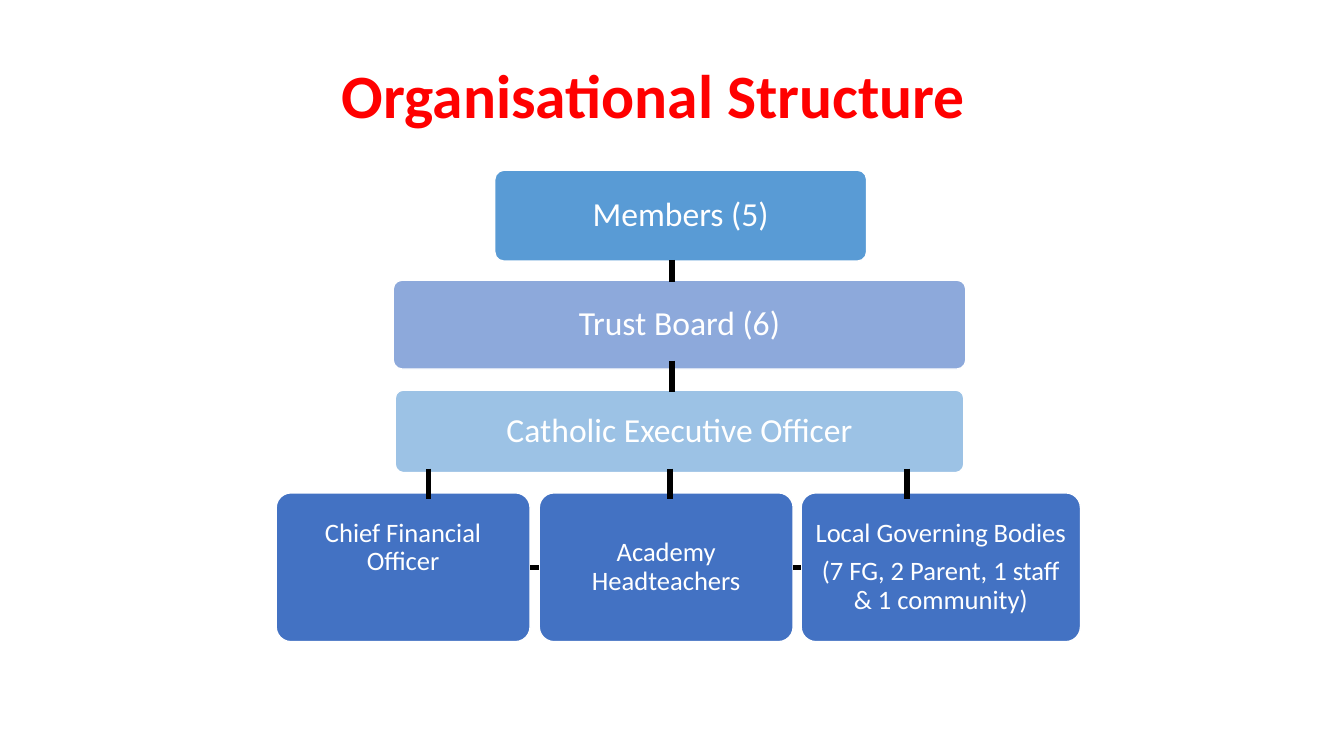
"""Build the organisational structure slide."""
from pptx import Presentation
from pptx.dml.color import RGBColor
from pptx.enum.shapes import MSO_CONNECTOR as LINE, MSO_SHAPE as SHAPE
from pptx.enum.text import MSO_ANCHOR as ANCHOR, MSO_AUTO_SIZE as FIT, PP_ALIGN as ALIGN
from pptx.oxml.ns import qn
from pptx.util import Cm, Pt


def paint(target, color):
    if hasattr(target, "solid"):
        target.solid()
        target = target.fore_color
    target.rgb = RGBColor.from_string(color)


def add_line(x1, y1, x2, y2):
    line = s.shapes.add_connector(LINE.STRAIGHT, Cm(x1), Cm(y1), Cm(x2), Cm(y2))
    line.line.width = Pt(4)
    paint(line.line.fill, "000000")
    pr = line._element.spPr
    pr.append(pr.makeelement(qn("a:effectLst"), {}))
    return line


prs = Presentation()
prs.slide_width, prs.slide_height = Cm(33.87), Cm(19.05)
s = prs.slides.add_slide(prs.slide_layouts[5])

title = s.shapes.title
title.left, title.top, title.width, title.height = Cm(8.36), Cm(1.3), Cm(17.17), Cm(2.13)
tf = title.text_frame
tf.text = "Organisational Structure"
tf.auto_size = FIT.NONE
tf.vertical_anchor = ANCHOR.TOP
p = tf.paragraphs[0]
p.alignment = ALIGN.LEFT
p.font.name, p.font.size, p.font.bold = "Calibri", Pt(44), True
paint(p.font.color, "FF0000")

ROW_TOP, ROW_HEIGHT = 12.42, 3.75
boxes = [
    (12.47, 4.29, 9.37, 2.29, "599BD5", 24, 0.25, ["Members (5)"]),
    (9.91, 7.06, 14.43, 2.24, "8DA9DB", 24, 0.25, ["Trust Board (6)"]),
    (9.96, 9.83, 14.33, 2.08, "9CC2E5", 24, 0.25, ["Catholic Executive Officer"]),
]
staff = [
    (6.96, 6.4, ["Chief Financial Officer"]),
    (13.59, 6.4, ["Academy Headteachers"]),
    (20.19, 7.04, ["Local Governing Bodies", "(7 FG, 2 Parent, 1 staff & 1 community)"]),
]
boxes += [(x, ROW_TOP, w, ROW_HEIGHT, "4372C3", 19, 0.15, lines) for x, w, lines in staff]

drawn = []
for x, y, w, h, color, size, inset, lines in boxes:
    sp = s.shapes.add_shape(SHAPE.ROUNDED_RECTANGLE, Cm(x), Cm(y), Cm(w), Cm(h))
    sp.adjustments[0] = 0.1
    sp.shadow.inherit = False
    paint(sp.fill, color)
    paint(sp.line.fill, "FFFFFF")
    sp.line.width = Pt(1)
    tf = sp.text_frame
    tf.word_wrap = True
    tf.vertical_anchor = ANCHOR.MIDDLE
    tf.margin_left = tf.margin_right = tf.margin_top = tf.margin_bottom = Cm(inset)
    for i, text in enumerate(lines):
        p = tf.add_paragraph() if i else tf.paragraphs[0]
        p.text = text
        p.alignment = ALIGN.CENTER
        p.line_spacing = 0.9
        if i:
            p.space_before = Pt(6.7)
        p.font.name, p.font.size = "Calibri", Pt(size)
        paint(p.font.color, "FFFFFF")
    drawn.append(sp)

finance, heads, governors = drawn[3:]
finance.text_frame.margin_bottom = Cm(1.12)

for x, top, bottom in [(16.94, 6.55, 7.11), (16.94, 9.09, 9.88),
                       (10.8, 11.81, 12.57), (16.89, 11.81, 12.57), (22.86, 11.81, 12.57)]:
    add_line(x, top, x, bottom)

for left, right in [(finance, heads), (heads, governors)]:
    link = add_line(0, 0, 1, 0)
    link.begin_connect(left, 3)
    link.end_connect(right, 1)

prs.save("out.pptx")
